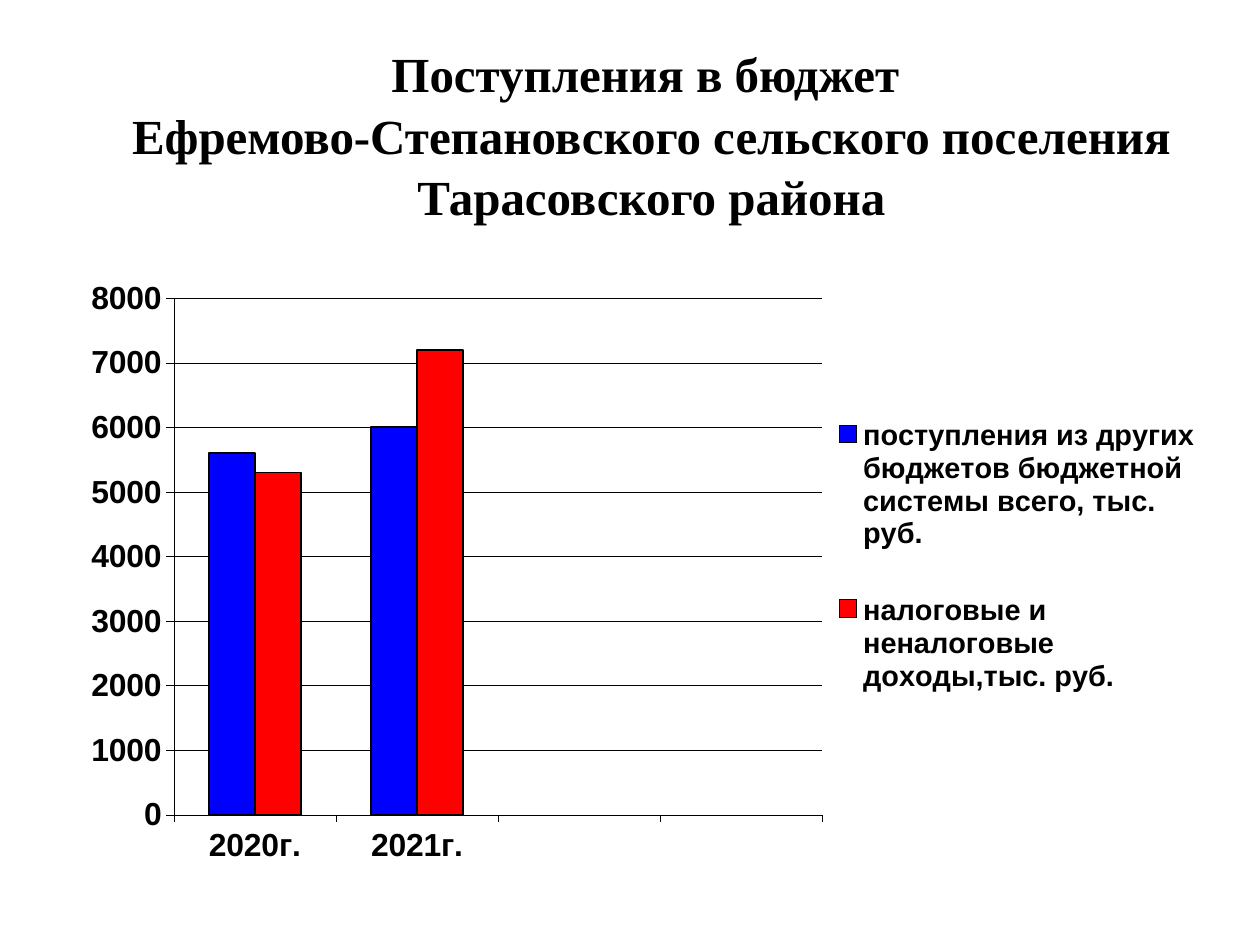
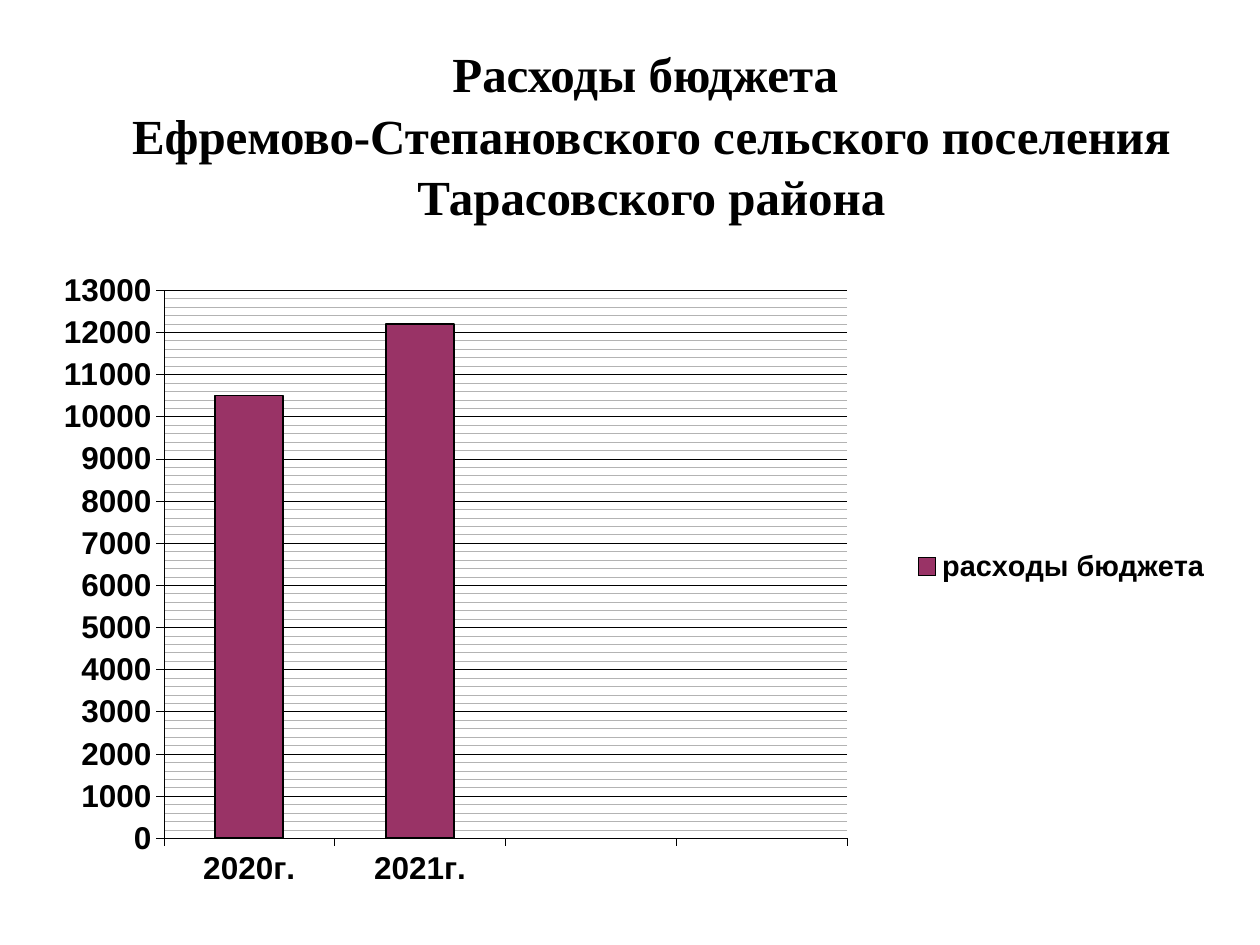
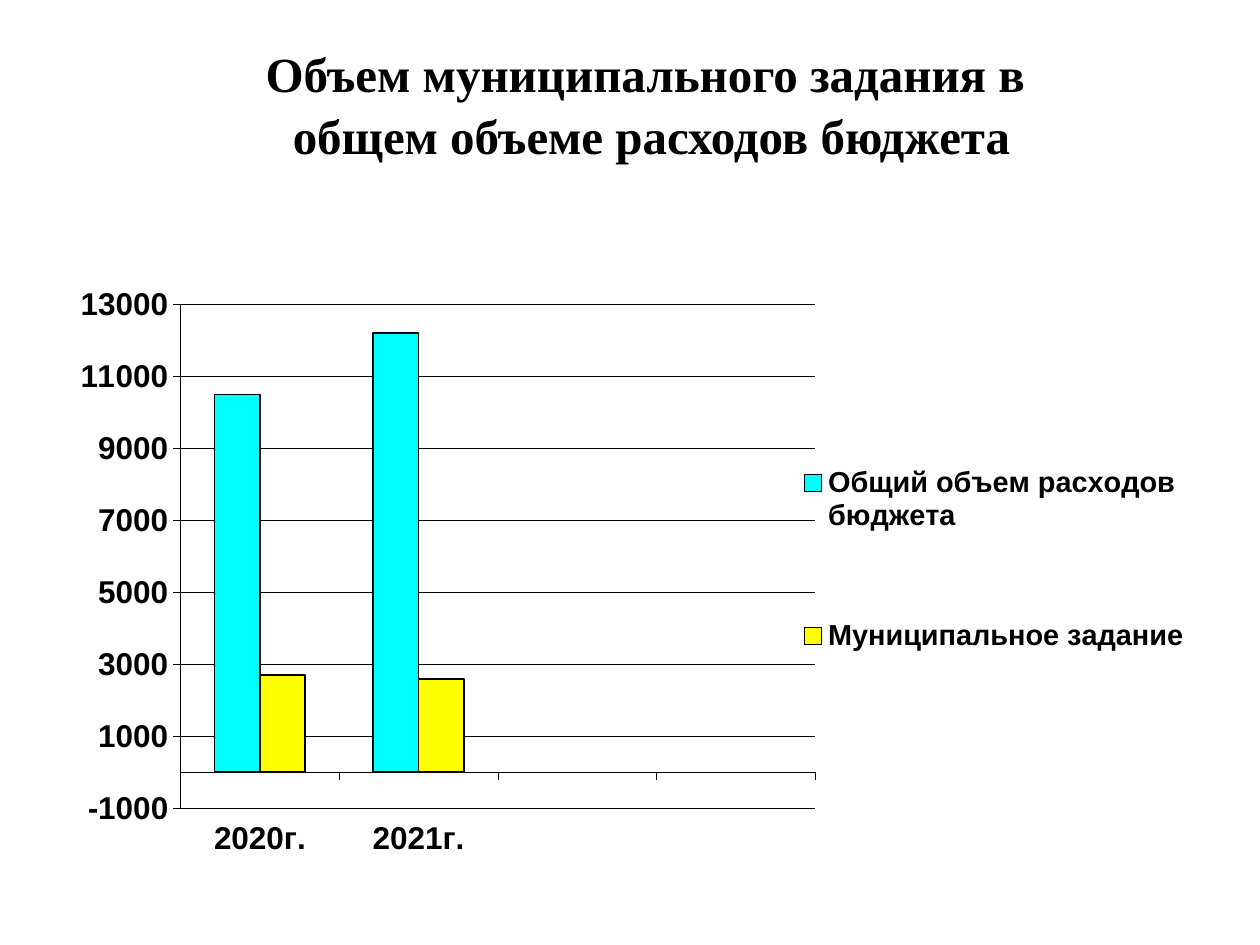
import pptx
import pptx.chart.data
import pptx.dml.color
import pptx.enum.chart
import pptx.enum.text
import pptx.oxml
import pptx.oxml.ns
import pptx.util
from pptx.util import Inches

BLACK = "000000"
MINOR_GRID = "B3B3B3"
TITLE_FONT = "Times New Roman"
CHART_FONT = "Arial"
# The two unnamed categories keep the right half of each plot free
YEARS = ["2020г.", "2021г.", "", ""]
SETTLEMENT = ["Ефремово-Степановского сельского поселения", "Тарасовского района"]


def color(hex_value):
    return pptx.dml.color.RGBColor.from_string(hex_value)


def style_font(font, size, name=CHART_FONT):
    font.name = name
    font.size = pptx.util.Pt(size)
    font.bold = True
    font.color.rgb = color(BLACK)


def style_line(line, width):
    line.color.rgb = color(BLACK)
    line.width = pptx.util.Pt(width)


def add_text(slide, lines, left, top, width, height, size=28, font=TITLE_FONT):
    frame = slide.shapes.add_textbox(
        Inches(left), Inches(top), Inches(width), Inches(height)).text_frame
    frame.word_wrap = True
    frame.margin_top = Inches(0.07)
    for number, line in enumerate(lines):
        paragraph = frame.paragraphs[0] if number == 0 else frame.add_paragraph()
        paragraph.alignment = pptx.enum.text.PP_ALIGN.CENTER
        paragraph.line_spacing = 1.05
        run = paragraph.add_run()
        run.text = line
        style_font(run.font, size, font)


def place(part, position, box, inner=False):
    """Give a chart part a fixed box, in fractions of the chart."""
    for old_layout in part.findall(pptx.oxml.ns.qn("c:layout")):
        part.remove(old_layout)
    target = '<c:layoutTarget val="inner"/>' if inner else ""
    modes = "".join(f'<c:{axis}Mode val="edge"/>' for axis in "xy")
    sizes = "".join(f'<c:{key} val="{value}"/>' for key, value in zip("xywh", box))
    part.insert(position, pptx.oxml.parse_xml(
        f'<c:layout {pptx.oxml.ns.nsdecls("c")}><c:manualLayout>'
        f"{target}{modes}{sizes}</c:manualLayout></c:layout>"))


def style_axis(axis, size):
    axis.major_tick_mark = pptx.enum.chart.XL_TICK_MARK.OUTSIDE
    axis.minor_tick_mark = pptx.enum.chart.XL_TICK_MARK.NONE
    style_line(axis.format.line, 0.25)
    style_font(axis.tick_labels.font, size)


def add_minor_grid(axis, step):
    axis.minor_unit = step
    axis.has_minor_gridlines = True
    grid = axis._element.find(pptx.oxml.ns.qn("c:minorGridlines"))
    grid.append(pptx.oxml.parse_xml(
        f'<c:spPr {pptx.oxml.ns.nsdecls("c", "a")}><a:ln w="{pptx.util.Pt(0.25)}">'
        f'<a:solidFill><a:srgbClr val="{MINOR_GRID}"/></a:solidFill></a:ln></c:spPr>'))


def add_columns(slide, box, series, plot_box, legend_box, top_value,
                step, low_value=0, minor_step=None, size=18):
    data = pptx.chart.data.CategoryChartData()
    data.categories = YEARS
    for name, amounts, _ in series:
        data.add_series(name, amounts + [None] * (len(YEARS) - len(amounts)))
    chart = slide.shapes.add_chart(
        pptx.enum.chart.XL_CHART_TYPE.COLUMN_CLUSTERED,
        *map(Inches, box), data).chart
    chart.has_title = False
    style_font(chart.font, size)

    # Columns
    plot = chart.plots[0]
    plot.gap_width = 150
    plot.overlap = 0
    plot.vary_by_categories = False
    for columns, (_, _, fill) in zip(plot.series, series):
        columns.format.fill.solid()
        columns.format.fill.fore_color.rgb = color(fill)
        columns.invert_if_negative = False
        style_line(columns.format.line, 1)

    # Axes and gridlines
    years, amounts_axis = chart.category_axis, chart.value_axis
    style_axis(years, size)
    years.tick_label_position = pptx.enum.chart.XL_TICK_LABEL_POSITION.LOW
    style_axis(amounts_axis, size)
    amounts_axis.minimum_scale = low_value
    amounts_axis.maximum_scale = top_value
    amounts_axis.major_unit = step
    amounts_axis.has_major_gridlines = True
    style_line(amounts_axis.major_gridlines.format.line, 0.25)
    if minor_step:
        add_minor_grid(amounts_axis, minor_step)

    # Legend and layout
    chart.has_legend = True
    legend = chart.legend
    legend.position = pptx.enum.chart.XL_LEGEND_POSITION.RIGHT
    legend.include_in_layout = False
    style_font(legend.font, 16.5)
    place(plot._element.getparent(), 0, plot_box, inner=True)
    place(legend._element, 1, legend_box)


def add_budget_slide(deck, title, title_height, **chart):
    slide = deck.slides.add_slide(deck.slide_layouts[6])
    add_text(slide, title, 0.67, 0.25, 9, title_height)
    add_columns(slide, **chart)


def main():
    deck = pptx.Presentation()
    deck.slide_width, deck.slide_height = Inches(10), Inches(7.5)
    spending = [10500, 12200]

    # Income
    add_budget_slide(
        deck, ["Поступления в бюджет "] + SETTLEMENT, 1.81,
        box=(0.59, 2.14, 8.98, 4.94),
        series=[
            ("поступления из других бюджетов бюджетной системы всего, тыс. руб.",
             [5600, 6000], "0000FF"),
            ("налоговые и неналоговые доходы,тыс. руб.", [5300, 7200], "FF0000")],
        plot_box=(0.088, 0.046, 0.573, 0.83), legend_box=(0.67, 0.17, 0.33, 0.58),
        top_value=8000, step=1000, size=18.2)

    # Spending
    add_budget_slide(
        deck, ["Расходы бюджета "] + SETTLEMENT, 1.91,
        box=(0.45, 2.1, 9.55, 5.21),
        series=[("расходы бюджета", spending, "993366")],
        plot_box=(0.089, 0.039, 0.568, 0.835), legend_box=(0.71, 0.41, 0.25, 0.1),
        top_value=13000, step=1000, minor_step=200)

    # Municipal assignment
    add_budget_slide(
        deck, ["Объем муниципального задания в ", "общем объеме расходов бюджета"], 1.25,
        box=(0.64, 2.19, 8.87, 4.84),
        series=[("Общий объем расходов бюджета", spending, "00FFFF"),
                ("Муниципальное задание", [2700, 2600], "FFFF00")],
        plot_box=(0.089, 0.047, 0.568, 0.826), legend_box=(0.65, 0.17, 0.35, 0.59),
        top_value=13000, step=2000, low_value=-1000)

    deck.save("out.pptx")


if __name__ == "__main__":
    main()
